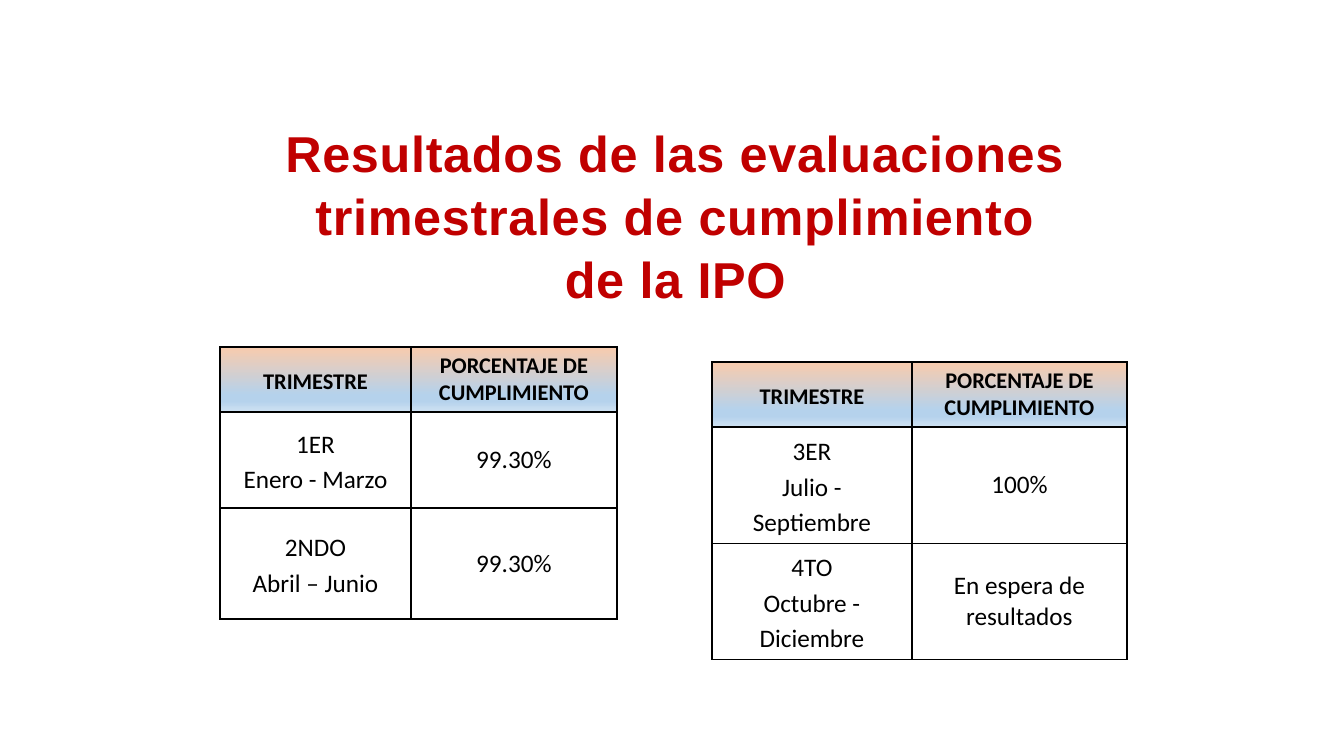
from lxml import etree
from pptx import Presentation
from pptx.dml.color import RGBColor
from pptx.enum.text import MSO_ANCHOR, MSO_AUTO_SIZE, PP_ALIGN
from pptx.oxml.ns import qn
from pptx.util import Pt

PX = 914400 / 100.8
CENTER = PP_ALIGN.CENTER
MIDDLE = MSO_ANCHOR.MIDDLE
NO_AUTOFIT = MSO_AUTO_SIZE.NONE
COLORS = {"title": "C00000", "text": "000000", "border": "000000", "cell": "FFFFFF",
          "peach": "F8CBAD", "blue": "B5D2EC", "pale": "CEE1F2"}
HEADER_STOPS = [(0, "peach"), (74, "blue"), (83, "blue"), (100, "pale")]
BORDERS = ("a:lnL", "a:lnR", "a:lnT", "a:lnB")
HEADINGS = [["TRIMESTRE"], ["PORCENTAJE DE CUMPLIMIENTO"]]
TITLE = "Resultados de las evaluaciones trimestrales de cumplimiento de la IPO"
FIRST_HALF = [
    HEADINGS,
    [["1ER", "Enero - Marzo"], ["99.30%"]],
    [["2NDO", "Abril – Junio"], ["99.30%"]],
]
SECOND_HALF = [
    HEADINGS,
    [["3ER", "Julio - Septiembre"], ["100%"]],
    [["4TO", "Octubre - Diciembre"], ["En espera de resultados"]],
]


def px(length):
    return round(length * PX)


def add_span(para, text, font_name, size, color, bold):
    span = para.add_run()
    span.text = text
    span.font.name = font_name
    span.font.size = Pt(size)
    span.font.bold = bold
    span.font.color.rgb = RGBColor.from_string(COLORS[color])
    return span


def add_title(page, text, left, top, width, height):
    box = page.shapes.title
    box.left, box.top, box.width, box.height = map(px, (left, top, width, height))
    frame = box.text_frame
    frame.word_wrap = True
    frame.auto_size = NO_AUTOFIT
    frame.vertical_anchor = MIDDLE
    para = frame.paragraphs[0]
    para.alignment = CENTER
    para.line_spacing = 1.04
    span = add_span(para, text, "Arial", 36, "title", True)
    span.font._element.set("spc", "50")


def add_color(parent, color):
    etree.SubElement(parent, qn("a:srgbClr"), val=COLORS[color])


def set_borders(cell):
    properties = cell._tc.get_or_add_tcPr()
    for border in BORDERS:
        line = etree.SubElement(properties, qn(border), w=str(Pt(1)))
        add_color(etree.SubElement(line, qn("a:solidFill")), "border")


def fill_header(cell):
    gradient = etree.SubElement(cell._tc.get_or_add_tcPr(), qn("a:gradFill"))
    stops = etree.SubElement(gradient, qn("a:gsLst"))
    for percent, color in HEADER_STOPS:
        add_color(etree.SubElement(stops, qn("a:gs"), pos=str(percent * 1000)), color)
    etree.SubElement(gradient, qn("a:lin"), ang=str(90 * 60000), scaled="0")


def fill_cell(cell, lines, is_header, line_spacing):
    cell.vertical_anchor = MIDDLE
    set_borders(cell)
    if is_header:
        fill_header(cell)
    else:
        cell.fill.solid()
        cell.fill.fore_color.rgb = RGBColor.from_string(COLORS["cell"])
    para = cell.text_frame.paragraphs[0]
    para.alignment = CENTER
    para.line_spacing = line_spacing
    for index, line in enumerate(lines):
        if index:
            para.add_line_break()
        add_span(para, line, "Calibri", 16 if is_header else 18, "text", is_header)


def add_results_table(page, rows, left, top, widths, heights):
    frame = page.shapes.add_table(len(rows), len(widths), px(left), px(top),
                                  px(sum(widths)), px(sum(heights)))
    table = frame.table
    table.first_row = False
    table.horz_banding = False
    for column, width in zip(table.columns, widths):
        column.width = px(width)
    for row, height in zip(table.rows, heights):
        row.height = px(height)
    for row_index, row in enumerate(rows):
        for column_index, lines in enumerate(row):
            fill_cell(table.cell(row_index, column_index), lines, row_index == 0,
                      1.0 if column_index else 1.15)


def main():
    """Build the slide of quarterly compliance results."""
    deck = Presentation()
    deck.slide_width, deck.slide_height = px(1344), px(756)
    page = deck.slides.add_slide(deck.slide_layouts[5])
    add_results_table(page, FIRST_HALF, 220, 347, (191, 206), (65, 96, 111))
    add_results_table(page, SECOND_HALF, 712, 362, (200, 215), (65, 116, 116))
    add_title(page, TITLE, 275, 117, 801, 194)
    deck.save("out.pptx")


if __name__ == "__main__":
    main()
